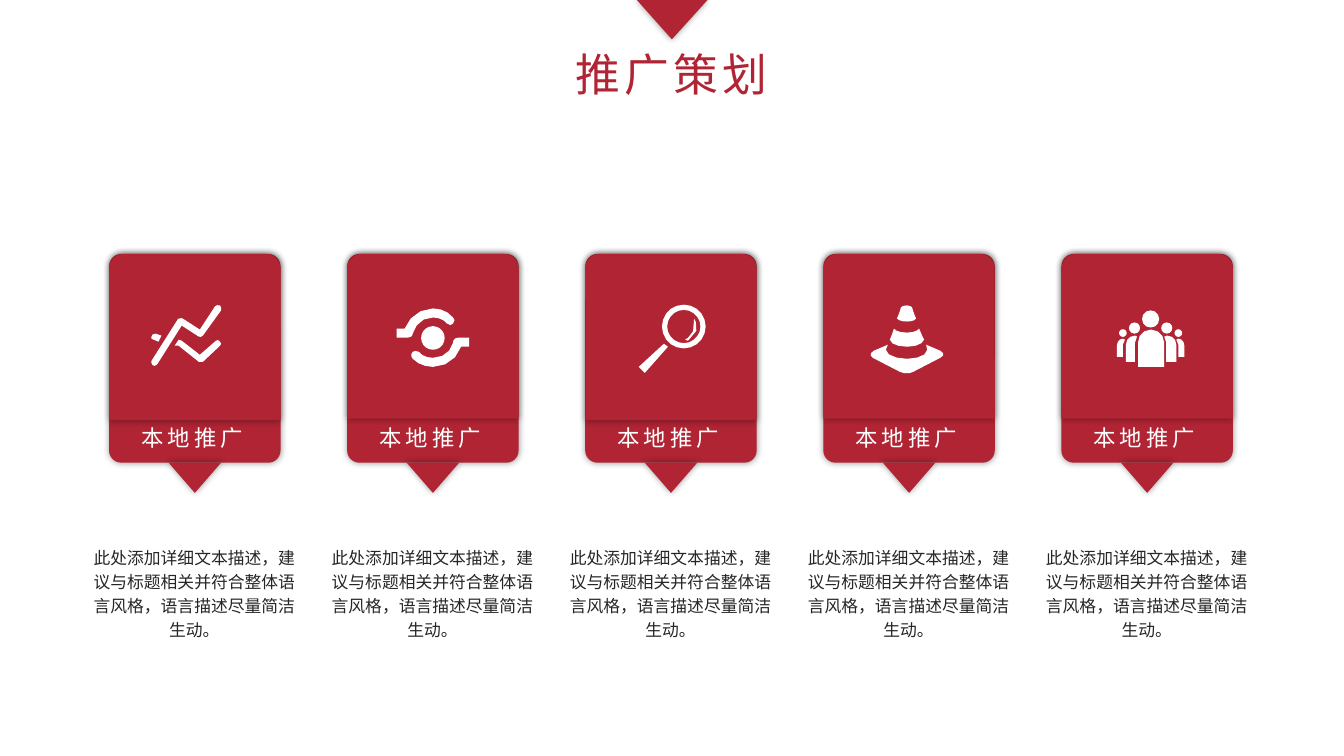
"""Builds a promotion plan slide with five icon cards."""
import math

import lxml.etree
import pptx
import pptx.dml.color
import pptx.enum.shapes
import pptx.enum.text
import pptx.oxml.ns
import pptx.util

Cm = pptx.util.Cm
Pt = pptx.util.Pt
KIND = pptx.enum.shapes.MSO_SHAPE
qn = pptx.oxml.ns.qn

RED = pptx.dml.color.RGBColor(0xB0, 0x24, 0x34)
WHITE = pptx.dml.color.RGBColor(0xFF, 0xFF, 0xFF)
INK = pptx.dml.color.RGBColor(0x26, 0x26, 0x26)
FONT = "Noto Sans CJK SC"
FINE = 10

TITLE = "推广策划"
LABEL = "本地推广"
BODY = "此处添加详细文本描述，建议与标题相关并符合整体语言风格，语言描述尽量简洁生动。"

GRAPH = """
M 72 23 L 89 34 C 90 35 92 34 93 33 L 111 8 C 112 6 111 4 110 3
C 108 2 106 3 105 4 L 90 27 L 73 16 C 72 16 71 15 70 16
C 69 16 69 16 68 17 L 42 58 C 41 59 42 61 43 62
C 44 62 44 63 45 63 C 46 63 47 62 48 61
M 106 38 L 90 52 L 72 38 L 69 37 L 65 43 L 69 43 L 89 59
C 90 59 92 59 93 59 L 110 43 C 111 42 112 40 110 39 C 109 37 107 37 106 38
M 44 37 L 49 39 L 52 33 L 46 31 C 44 31 42 32 42 34 C 41 35 42 37 44 37
"""
ORBIT = """
M 110 35 C 106 35 105 38 105 40 C 103 49 95 55 85 55 C 79 55 74 53 71 49
C 69 48 66 48 65 49 C 63 51 63 54 65 56 C 70 61 77 64 85 64
C 98 64 109 56 113 44 L 121 44 L 121 35
M 65 31 C 67 22 75 15 85 15 C 91 15 96 17 99 21 C 101 23 104 23 105 21
C 107 19 107 16 105 15 C 100 9 93 6 85 6 C 72 6 61 15 57 26
L 49 26 L 49 35 L 60 35 C 64 35 65 32 65 31
O 85 35.3 11.7
"""
RING = "O 97.8 24 21.7 O 97.8 24 16.5"
GRIP = "M 53 64 L 59 70 L 82 44 L 78 41"
GLINT = "M 108 16 C 111 32 99 37 99 37 L 102 38 C 117 29 108 16 108 16"
CONE = """
M 116 48 L 102 42 L 103 47 C 103 52 94 56 83 56 C 72 56 62 52 62 47
L 64 42 L 50 48 C 46 50 46 53 49 55 L 76 69 C 80 71 86 71 89 69
L 116 55 C 120 53 120 50 116 48
M 83 19 C 87 19 91 18 92 16 C 90 12 89 8 88 5 C 88 4 85 3 83 3
C 80 3 78 4 77 5 C 76 8 75 12 73 16 C 75 18 78 19 83 19
M 83 44 C 92 44 99 41 100 37 C 98 34 97 30 95 26 C 94 28 89 30 83 30
C 76 30 71 28 70 26 C 69 30 67 34 66 37 C 66 41 74 44 83 44
"""
TEAM = """
O 61 30.5 3.8 O 116 30.5 3.8 O 72.5 25.5 5.5 O 104.5 25.5 5.5 O 88.5 16.5 8.5
M 76 64 L 102 64 L 102 40 C 102 33 96 27 89 27 C 81 27 76 33 76 40
M 73 40 L 73 59 L 64 59 L 64 42 C 64 37 68 33 73 33 L 75 34 L 73 40
M 114 59 L 104 59 L 104 40 L 102 34 L 105 33 C 110 33 114 37 114 42
M 61 36 L 63 37 L 61 42 L 61 54 L 55 54 L 55 43 C 55 39 58 36 61 36
M 122 54 L 116 54 L 116 42 L 114 37 L 116 36 C 119 36 122 39 122 43
"""
CARDS = [([GRAPH], 4.19), ([ORBIT], 4.15), ([RING, GRIP, GLINT], 4.19),
         ([CONE], 4.15), ([TEAM], 4.15)]


def trace(path):
    """Turn path marks into lists of points."""
    loops = []
    marks = iter(path.split())
    for mark in marks:
        count = {"M": 2, "L": 2, "C": 6, "O": 3}[mark]
        nums = [float(next(marks)) * FINE for _ in range(count)]
        if mark == "M":
            loops.append([tuple(nums)])
        elif mark == "L":
            loops[-1].append(tuple(nums))
        elif mark == "O":
            x, y, r = nums
            sides = 12 if r < 10 * FINE else 20
            turns = [math.tau * k / sides for k in range(sides)]
            loops.append([(x + r * math.cos(t), y + r * math.sin(t)) for t in turns])
        else:
            ends = [loops[-1][-1], nums[:2], nums[2:4], nums[4:]]
            steps = 3 if math.dist(ends[0], ends[3]) > 6 * FINE else 2
            for k in range(1, steps + 1):
                t = k / steps
                mix = [(1 - t) ** 3, 3 * t * (1 - t) ** 2, 3 * t * t * (1 - t), t ** 3]
                loops[-1].append(tuple(sum(m * p[i] for m, p in zip(mix, ends)) for i in (0, 1)))
    return loops


class Deck:
    """Holds the style and the current slide."""

    def __init__(self):
        """Open a blank wide slide."""
        self.show = pptx.Presentation()
        self.show.slide_width = Cm(33.87)
        self.show.slide_height = Cm(19.05)
        self.slide = self.show.slides.add_slide(self.show.slide_layouts[6])
        self.host = self.slide.shapes

    def group(self):
        """Send the next elements to a new group."""
        self.host = self.slide.shapes.add_group_shape().shapes

    def leave(self):
        """Send the next elements to the slide itself."""
        self.host = self.slide.shapes

    def paint(self, shape, color):
        """Give a shape a plain fill."""
        shape.fill.solid()
        shape.fill.fore_color.rgb = color
        shape.line.fill.background()
        shape.shadow.inherit = False

    def block(self, kind, x, y, w, h, adj=(), turn=0):
        """Add a red shape with a soft shadow."""
        shape = self.host.add_shape(kind, Cm(x), Cm(y), Cm(w), Cm(h))
        for k, value in enumerate(adj):
            shape.adjustments[k] = value
        shape.rotation = turn
        self.paint(shape, RED)
        fx = shape._element.spPr.find(qn("a:effectLst"))
        glow = lxml.etree.SubElement(
            fx, qn("a:outerShdw"), blurRad=str(Pt(5)), dist="0", dir="0",
            algn="ctr", rotWithShape="0")
        tone = lxml.etree.SubElement(glow, qn("a:srgbClr"), val="000000")
        lxml.etree.SubElement(tone, qn("a:alpha"), val="40000")

    def icon(self, path, x, y):
        """Add a white outline drawn from path marks."""
        first, *rest = trace(path)
        pen = self.host.build_freeform(*first[0], scale=Cm(0.0254) / FINE)
        pen.add_line_segments(first[1:], close=True)
        for loop in rest:
            pen.move_to(*loop[0])
            pen.add_line_segments(loop[1:], close=True)
        self.paint(pen.convert_to_shape(Cm(x), Cm(y)), WHITE)

    def text(self, words, x, y, w, h, size, color, pad=(0.25, 0.13),
             wrap=True, gap=0, lead=1.0, mid=False, track=0):
        """Add a centred text box."""
        frame = self.host.add_textbox(Cm(x), Cm(y), Cm(w), Cm(h)).text_frame
        frame.word_wrap = wrap
        frame.auto_size = pptx.enum.text.MSO_AUTO_SIZE.SHAPE_TO_FIT_TEXT
        frame.margin_left = frame.margin_right = Cm(pad[0])
        frame.margin_top = frame.margin_bottom = Cm(pad[1])
        if mid:
            frame.vertical_anchor = pptx.enum.text.MSO_ANCHOR.MIDDLE
        line = frame.paragraphs[0]
        line.text = words
        line.alignment = pptx.enum.text.PP_ALIGN.CENTER
        line.line_spacing = lead
        line.space_before = Pt(gap)
        line.font.size = Pt(size)
        line.font.color.rgb = color
        line.font.name = FONT
        props = line._p.pPr.find(qn("a:defRPr"))
        props.set("spc", str(track * 100))
        lxml.etree.SubElement(props, qn("a:ea"), typeface=FONT)


def main():
    """Draw the slide and save it."""
    deck = Deck()
    deck.text(TITLE, 9.27, 1.09, 15.32, 1.55, 32, RED, pad=(0.18, 0.1), track=3)
    deck.block(KIND.ISOSCELES_TRIANGLE, 16.05, 0, 1.78, 0.99, [0.505], 180)
    for k, (paths, cap) in enumerate(CARDS):
        x = 2.75 + 6 * k
        deck.group()
        deck.block(KIND.ROUNDED_RECTANGLE, x, 6.4, 4.32, 5.26, [0.071])
        deck.block(KIND.ISOSCELES_TRIANGLE, x + 1.5, 11.66, 1.32, 0.76, turn=180)
        deck.text(LABEL, x + 0.73, 10.69, 2.72, 0.69, 16, WHITE, pad=(0, 0),
                  wrap=False, gap=3.2, mid=True, track=3)
        deck.block(KIND.ROUND_2_SAME_RECTANGLE, x, 6.4, 4.32, cap, [0.087, 0])
        for path in paths:
            deck.icon(path, x, 7.62)
        deck.leave()
        deck.text(BODY, x - 0.71, 13.56, 5.72, 2.72, 12, INK, gap=2.4, lead=1.2)
    deck.show.save("out.pptx")


if __name__ == "__main__":
    main()
